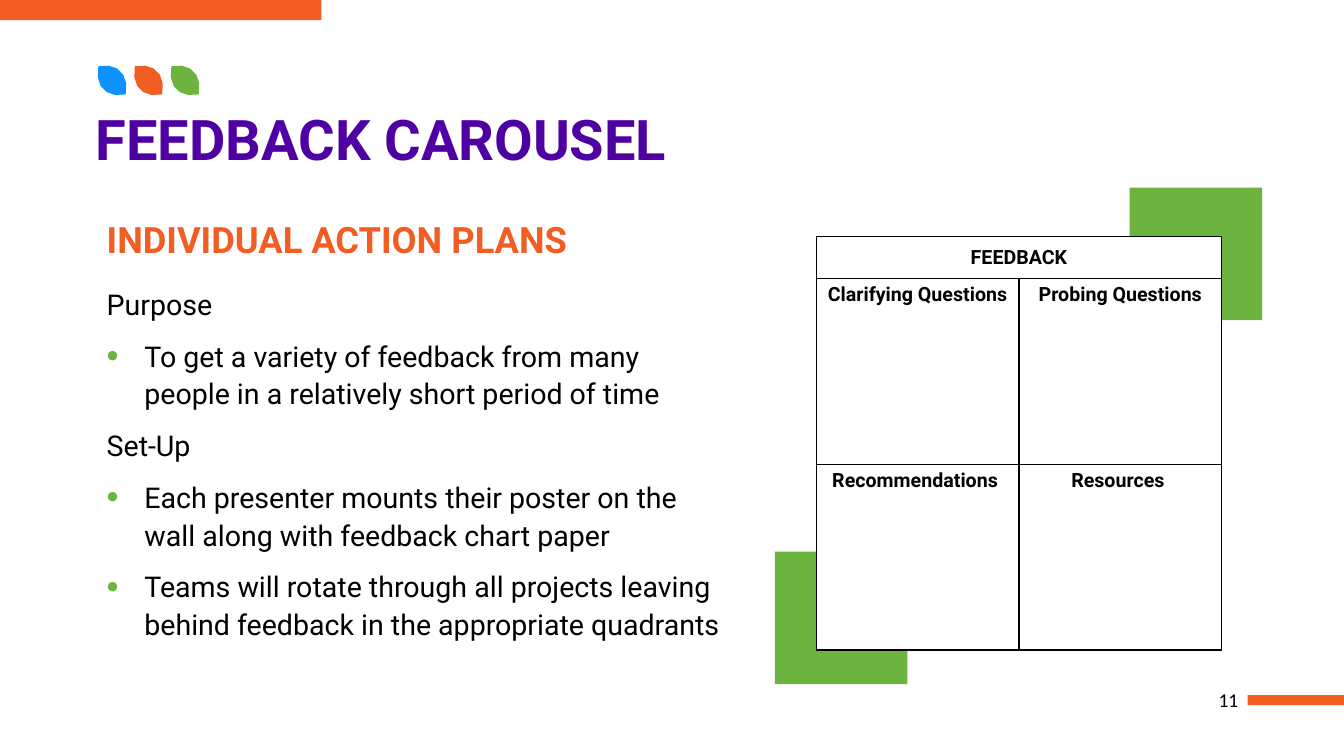
"""Build the Feedback Carousel slide with its action plan text and feedback chart."""
import pptx
import pptx.dml.color
import pptx.enum.shapes
import pptx.enum.text
import pptx.oxml
import pptx.oxml.ns
import pptx.util

Cm = pptx.util.Cm
ALIGN = pptx.enum.text.PP_ALIGN
ANCHOR = pptx.enum.text.MSO_ANCHOR

ORANGE, GREEN, BLUE = "F15D22", "6CB33F", "0D92FF"
PURPLE, BLACK, WHITE = "4F00A3", "000000", "FFFFFF"

TITLE = "FEEDBACK CAROUSEL"
HEADING = "INDIVIDUAL ACTION PLANS"
PLAN = [
    ("Purpose", False),
    ("To get a variety of feedback from many people in a relatively short period of time", True),
    ("Set-Up", False),
    ("Each presenter mounts their poster on the wall along with feedback chart paper", True),
    ("Teams will rotate through all projects leaving behind feedback in the appropriate quadrants", True),
]
FEEDBACK = [
    ("FEEDBACK", ""),
    ("Clarifying Questions ", "Probing Questions"),
    ("Recommendations ", "Resources "),
]
PAGE_NUMBER = "11"

RECTANGLES = [
    (28.47, 4.73, 3.34, 3.34, GREEN),
    (0, 0, 8.1, 0.51, ORANGE),
    (31.44, 17.52, 2.43, 0.25, ORANGE),
    (19.53, 13.9, 3.34, 3.34, GREEN),
]
LEAF_COLORS = [BLUE, ORANGE, GREEN]
LEAF_LEFT, LEAF_TOP, LEAF_STEP = 2.48, 1.67, 0.92
LEAF_CURVES = [
    [(0, 0), (0.48, -0.1), (0.79, 0.2), (0.69, 0.71)],
    [(0.69, 0.71), (0.2, 0.81), (-0.1, 0.51), (0, 0)],
]
CURVE_STEPS = 5
TABLE_LEFT, TABLE_TOP, COLUMN_WIDTH = 20.57, 5.96, 5.11
ROW_HEIGHTS = [1.06, 4.68, 4.68]


def color(value):
    return pptx.dml.color.RGBColor.from_string(value)


def paint(shape, fill):
    shape.shadow.inherit = False
    shape.fill.solid()
    shape.fill.fore_color.rgb = color(fill)
    shape.line.fill.background()


def add_xml(parent, tag, content="", **attributes):
    values = "".join(f' {name}="{value}"' for name, value in attributes.items())
    namespace = pptx.oxml.ns.nsdecls("a")
    parent.append(pptx.oxml.parse_xml(f"<a:{tag} {namespace}{values}>{content}</a:{tag}>"))


def add_bullet(paragraph):
    properties = paragraph._p.get_or_add_pPr()
    properties.set("marL", str(Cm(0.95)))
    properties.set("indent", str(-Cm(0.95)))
    add_xml(properties, "buClr", f'<a:srgbClr val="{GREEN}"/>')
    add_xml(properties, "buSzPct", val=120000)
    add_xml(properties, "buFont", typeface="Arial")
    add_xml(properties, "buChar", char="•")


def write(paragraph, text, size=14, fill=BLACK, font="Roboto", bold=False,
          align=ALIGN.LEFT, spacing=1, after=0, bullet=False):
    paragraph.alignment = align
    paragraph.line_spacing = spacing
    paragraph.space_after = pptx.util.Pt(after)
    if bullet:
        add_bullet(paragraph)
    run = paragraph.add_run()
    run.text = text
    run.font.name = font
    run.font.size = pptx.util.Pt(size)
    run.font.bold = bold
    run.font.color.rgb = color(fill)


def add_frame(slide, left, top, width, height, anchor=ANCHOR.TOP):
    frame = slide.shapes.add_textbox(Cm(left), Cm(top), Cm(width), Cm(height)).text_frame
    frame.word_wrap = True
    frame.vertical_anchor = anchor
    return frame


def curve_point(curve, t):
    weights = [(1 - t) ** 3, 3 * t * (1 - t) ** 2, 3 * t ** 2 * (1 - t), t ** 3]
    return [sum(w * point[axis] for w, point in zip(weights, curve)) for axis in (0, 1)]


def add_leaf(slide, left, top, fill):
    points = [curve_point(curve, step / CURVE_STEPS)
              for curve in LEAF_CURVES for step in range(CURVE_STEPS)]
    outline = [(Cm(left + x), Cm(top + y)) for x, y in points]
    builder = slide.shapes.build_freeform(*outline[0])
    builder.add_line_segments(outline[1:], close=True)
    paint(builder.convert_to_shape(), fill)


def add_feedback_table(slide):
    table = slide.shapes.add_table(
        len(FEEDBACK), 2, Cm(TABLE_LEFT), Cm(TABLE_TOP),
        Cm(2 * COLUMN_WIDTH), Cm(sum(ROW_HEIGHTS))).table
    for column in table.columns:
        column.width = Cm(COLUMN_WIDTH)
    for row, height in zip(table.rows, ROW_HEIGHTS):
        row.height = Cm(height)
    table.cell(0, 0).merge(table.cell(0, 1))
    for row, labels in enumerate(FEEDBACK):
        for column, label in enumerate(labels):
            cell = table.cell(row, column)
            for side in ("lnL", "lnR", "lnT", "lnB"):
                add_xml(cell._tc.get_or_add_tcPr(), side,
                        f'<a:solidFill><a:srgbClr val="{BLACK}"/></a:solidFill>',
                        w=pptx.util.Pt(1))
            cell.fill.solid()
            cell.fill.fore_color.rgb = color(WHITE)
            cell.vertical_anchor = ANCHOR.TOP if row else ANCHOR.MIDDLE
            if label:
                write(cell.text_frame.paragraphs[0], label, bold=True, align=ALIGN.CENTER)


def main():
    presentation = pptx.Presentation()
    presentation.slide_width, presentation.slide_height = Cm(33.87), Cm(19.05)
    slide = presentation.slides.add_slide(presentation.slide_layouts[6])

    for left, top, width, height, fill in RECTANGLES:
        paint(slide.shapes.add_shape(pptx.enum.shapes.MSO_SHAPE.RECTANGLE,
                                     Cm(left), Cm(top), Cm(width), Cm(height)), fill)
    for index, fill in enumerate(LEAF_COLORS):
        add_leaf(slide, LEAF_LEFT + index * LEAF_STEP, LEAF_TOP, fill)

    number = add_frame(slide, 29.28, 17.27, 2.18, 0.71, ANCHOR.MIDDLE)
    write(number.paragraphs[0], PAGE_NUMBER, font="Calibri", align=ALIGN.RIGHT)
    heading = add_frame(slide, 2.44, 5.23, 16.26, 1.45)
    write(heading.paragraphs[0], HEADING, size=25.9, fill=ORANGE, bold=True, spacing=1.1)
    plan = add_frame(slide, 2.44, 7.02, 16.26, 9.83)
    for index, (text, bullet) in enumerate(PLAN):
        paragraph = plan.add_paragraph() if index else plan.paragraphs[0]
        write(paragraph, text, size=20.4, spacing=1.1, after=10, bullet=bullet)
    title = add_frame(slide, 2.16, 2.69, 29, 1.78)
    write(title.paragraphs[0], TITLE, size=40, fill=PURPLE, bold=True, spacing=0.9)
    add_feedback_table(slide)

    presentation.save("out.pptx")


if __name__ == "__main__":
    main()
